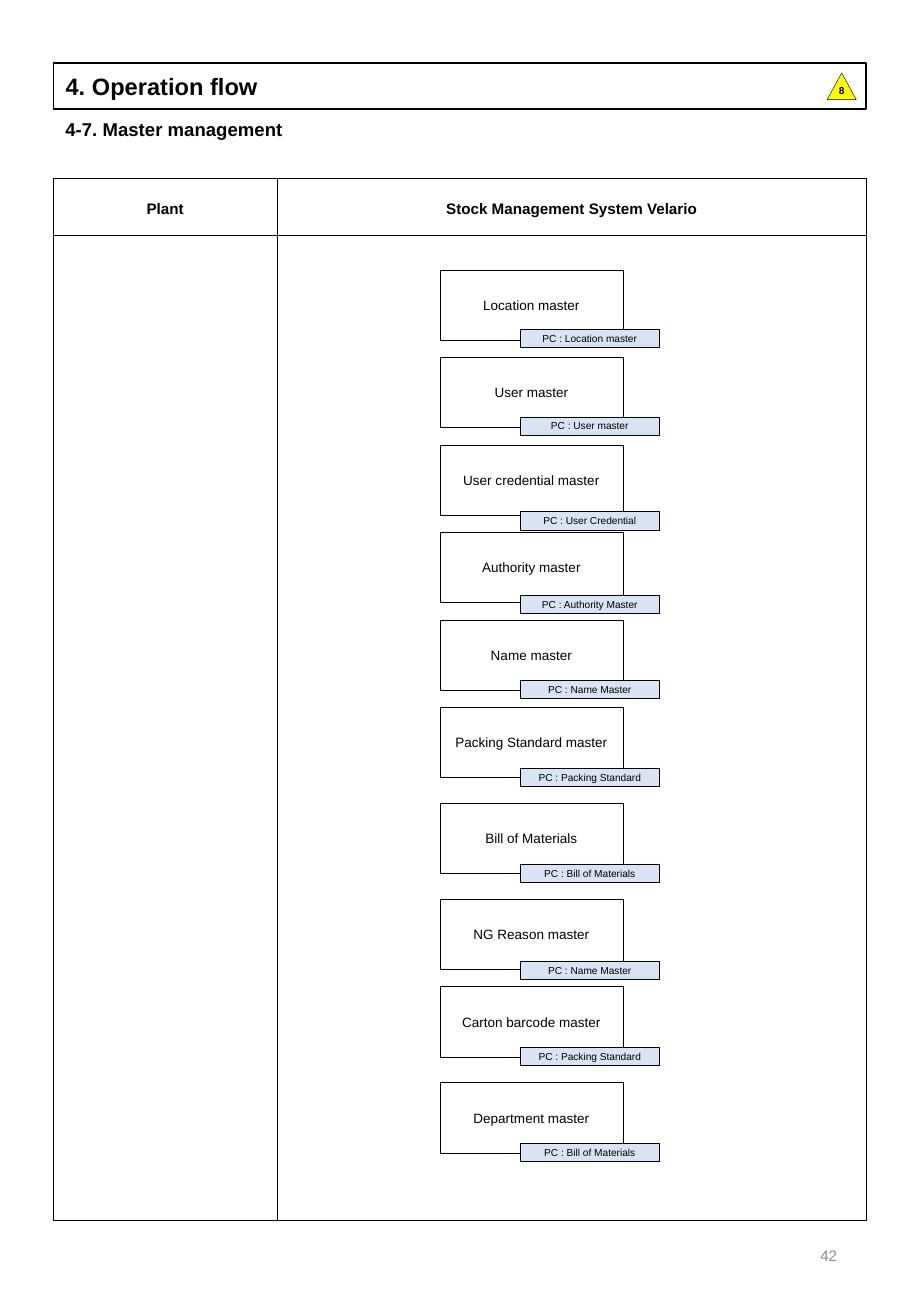
from lxml.etree import SubElement
from pptx import Presentation
from pptx.dml.color import RGBColor
from pptx.enum.shapes import MSO_CONNECTOR, MSO_SHAPE
from pptx.enum.text import MSO_ANCHOR, PP_ALIGN
from pptx.oxml.ns import qn
from pptx.util import Inches, Pt

COLORS = {"ink": "000000", "tag": "DAE3F3", "badge": "FFFF00", "page": "8C8C8C"}
FONT = "Arial"

# The slide is a grid of 75 columns by 108.3 rows.
COLS, ROWS = 75, 108.3
CELL = Inches(0.1)
LEFT, WIDTH = 4.4, 66.9
SPLIT, RIGHT = 22.8, LEFT + WIDTH
TOP, BOTTOM, HEAD = 14.7, 100.4, 4.7
BOX_X, BOX_W, BOX_H = 36.2, 15.1, 5.8
TAG_X, TAG_W, TAG_H = 42.8, 11.5, 1.5
FIRST_BOX, STEP, WIDE_STEP = 22.2, 7.2, 7.9

# Box label, tag label, tag offset below the box top, step to the next box
MASTERS = [
    ("Location master", "Location master", 4.9, STEP),
    ("User master", "User master", 4.9, STEP),
    ("User credential master", "User Credential", 5.5, STEP),
    ("Authority master", "Authority Master", 5.2, STEP),
    ("Name master", "Name Master", 5, STEP),
    ("Packing Standard master", "Packing Standard", 5, WIDE_STEP),
    ("Bill of Materials", "Bill of Materials", 5, WIDE_STEP),
    ("NG Reason master", "Name Master", 5.1, STEP),
    ("Carton barcode master", "Packing Standard", 5, WIDE_STEP),
    ("Department master", "Bill of Materials", 5, STEP),
]


def grid(*cells):
    return [round(n * CELL) for n in cells]


def rgb(name):
    return RGBColor.from_string(COLORS[name])


def write(sp, text, size, bold=False, align=PP_ALIGN.CENTER,
          anchor=MSO_ANCHOR.MIDDLE, color="ink"):
    tf = sp.text_frame
    tf.word_wrap = True
    tf.vertical_anchor = anchor
    tf.text = text
    p = tf.paragraphs[0]
    p.alignment = align
    font = p.runs[0].font
    font.name, font.size, font.bold = FONT, Pt(size), bold
    font.color.rgb = rgb(color)


def outline(sp, width):
    sp.line.color.rgb = rgb("ink")
    sp.line.width = Pt(width)


def add_title(slide, text):
    title = slide.shapes.title
    title.left, title.top, title.width, title.height = grid(LEFT, 5.2, WIDTH, 3.8)
    outline(title, 1)
    write(title, text, 14, bold=True, align=PP_ALIGN.LEFT)


def add_label(slide, at, text, size, **style):
    write(slide.shapes.add_textbox(*grid(*at)), text, size, **style)


def add_box(slide, at, fill=None, kind=MSO_SHAPE.RECTANGLE):
    sp = slide.shapes.add_shape(kind, *grid(*at))
    sp.shadow.inherit = False
    if fill:
        sp.fill.solid()
        sp.fill.fore_color.rgb = rgb(fill)
    else:
        sp.fill.background()
    outline(sp, 0.25)
    return sp


def add_divider(slide, x, top, bottom):
    line = slide.shapes.add_connector(MSO_CONNECTOR.STRAIGHT, *grid(x, top, x, bottom))
    outline(line, 0.5)
    SubElement(line._element.spPr, qn("a:effectLst"))


def add_frame(slide):
    """Draw the two-column flow frame with its header row."""
    add_box(slide, (LEFT, TOP, WIDTH, BOTTOM - TOP))
    add_box(slide, (LEFT, TOP, WIDTH, HEAD))
    add_divider(slide, SPLIT, TOP, BOTTOM)
    add_label(slide, (LEFT, TOP + 0.1, SPLIT - LEFT, HEAD), "Plant", 9, bold=True)
    add_label(slide, (SPLIT, TOP + 0.1, RIGHT - SPLIT, HEAD),
              "Stock Management System Velario", 9, bold=True)


def add_masters(slide):
    y = FIRST_BOX
    for name, screen, offset, step in MASTERS:
        write(add_box(slide, (BOX_X, y, BOX_W, BOX_H)), name, 8)
        tag = add_box(slide, (TAG_X, y + offset, TAG_W, TAG_H), "tag")
        write(tag, f"PC : {screen}", 6)
        y += step


def add_badge(slide, text):
    badge = add_box(slide, (68.1, 6, 2.4, 2.2), "badge", MSO_SHAPE.ISOSCELES_TRIANGLE)
    write(badge, text, 6, bold=True)
    tf = badge.text_frame
    tf.word_wrap = False
    tf.margin_top, tf.margin_bottom = 0, Inches(0.05)


def main():
    prs = Presentation()
    prs.slide_width, prs.slide_height = grid(COLS, ROWS)
    slide = prs.slides.add_slide(prs.slide_layouts[5])
    add_title(slide, "4. Operation flow")
    add_label(slide, (LEFT, 9.2, WIDTH, 2.9), "4-7. Master management", 11,
              bold=True, align=PP_ALIGN.LEFT, anchor=MSO_ANCHOR.TOP)
    add_frame(slide)
    add_masters(slide)
    add_badge(slide, "8")
    add_label(slide, (53, BOTTOM, 16.9, 5.8), "42", 9,
              align=PP_ALIGN.RIGHT, color="page")
    prs.save("out.pptx")


if __name__ == "__main__":
    main()
